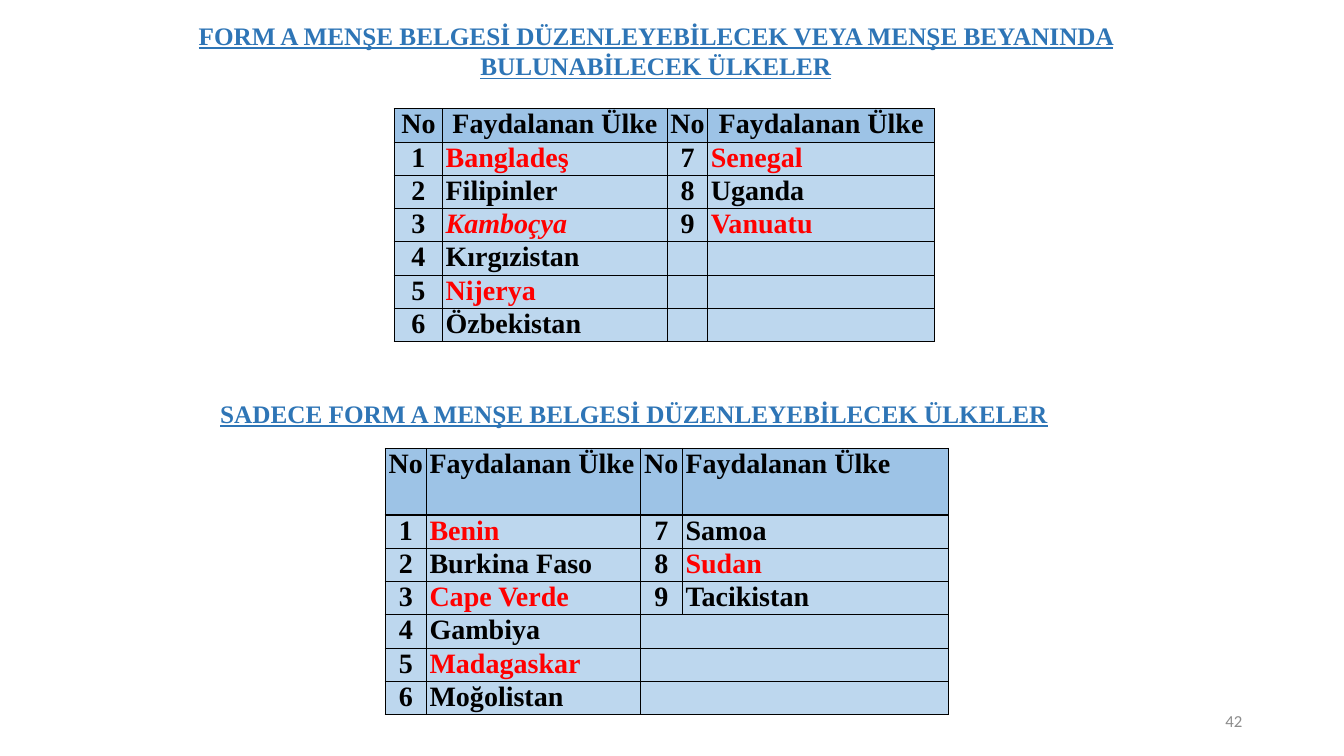
from pptx import Presentation
from pptx.dml.color import RGBColor
from pptx.enum.text import MSO_ANCHOR, MSO_AUTO_SIZE, PP_ALIGN
from pptx.oxml import parse_xml
from pptx.oxml.ns import nsdecls
from pptx.util import Inches, Pt

LEFT, CENTER, RIGHT = PP_ALIGN.LEFT, PP_ALIGN.CENTER, PP_ALIGN.RIGHT
TOP, MIDDLE = MSO_ANCHOR.TOP, MSO_ANCHOR.MIDDLE
NO_FIT = MSO_AUTO_SIZE.NONE

SERIF = "Times New Roman"
BLACK, RED, BLUE, GRAY = "000000", "FF0000", "2E75B6", "8C8C8C"
HEADER_FILL, BODY_FILL = "9DC3E6", "BDD7EE"

DECLARATION_TITLE = "FORM A MENŞE BELGESİ DÜZENLEYEBİLECEK VEYA MENŞE BEYANINDA BULUNABİLECEK ÜLKELER"
FORM_ONLY_TITLE = "SADECE FORM A MENŞE BELGESİ DÜZENLEYEBİLECEK ÜLKELER"
PAGE_NUMBER = "42"
HEADER = ["No", "Faydalanan Ülke"] * 2

DECLARATION_ROWS = [
    HEADER,
    ["1", "Bangladeş", "7", "Senegal"],
    ["2", "Filipinler", "8", "Uganda"],
    ["3", "Kamboçya", "9", "Vanuatu"],
    ["4", "Kırgızistan", "", ""],
    ["5", "Nijerya", "", ""],
    ["6", "Özbekistan", "", ""],
]
FORM_ONLY_ROWS = [
    HEADER,
    ["1", "Benin", "7", "Samoa"],
    ["2", "Burkina Faso", "8", "Sudan"],
    ["3", "Cape Verde", "9", "Tacikistan"],
    ["4", "Gambiya"],
    ["5", "Madagaskar"],
    ["6", "Moğolistan"],
]
RED_COUNTRIES = {"Bangladeş", "Kamboçya", "Nijerya", "Senegal", "Vanuatu",
                 "Benin", "Cape Verde", "Madagaskar", "Sudan"}
ITALIC_COUNTRIES = {"Kamboçya"}


def color(value):
    return RGBColor.from_string(value)


def write(frame, text, size=20, font=SERIF, ink=BLACK, bold=True,
          italic=False, underline=False, align=LEFT):
    para = frame.paragraphs[0]
    para.alignment = align
    span = para.add_run()
    span.text = text
    span.font.name = font
    span.font.size = Pt(size)
    span.font.bold = bold
    span.font.italic = italic
    span.font.underline = underline
    span.font.color.rgb = color(ink)


def place(box, left, top, width, height, anchor=TOP):
    box.left, box.top = Inches(left), Inches(top)
    box.width, box.height = Inches(width), Inches(height)
    frame = box.text_frame
    frame.word_wrap = True
    frame.auto_size = NO_FIT
    frame.vertical_anchor = anchor
    return frame


def add_text(page, left, top, width, height, text, anchor=TOP, **style):
    box = page.shapes.add_textbox(0, 0, 0, 0)
    write(place(box, left, top, width, height, anchor), text, **style)


def format_cell(cell, fill):
    cell.margin_left = cell.margin_right = Inches(0.03)
    cell.margin_top = cell.margin_bottom = 0
    properties = cell._tc.get_or_add_tcPr()
    for side in ("lnL", "lnR", "lnT", "lnB"):
        properties.append(parse_xml(
            f'<a:{side} {nsdecls("a")} w="12700"><a:solidFill>'
            f'<a:srgbClr val="{BLACK}"/></a:solidFill></a:{side}>'))
    cell.fill.solid()
    cell.fill.fore_color.rgb = color(fill)


def add_countries(page, left, top, widths, header_height, row_height, rows, header_align):
    heights = [header_height] + [row_height] * (len(rows) - 1)
    table = page.shapes.add_table(
        len(rows), len(widths), Inches(left), Inches(top),
        Inches(sum(widths)), Inches(sum(heights))).table
    table.first_row = table.horz_banding = False
    for column, width in zip(table.columns, widths):
        column.width = Inches(width)
    for row_index, (texts, height) in enumerate(zip(rows, heights)):
        table.rows[row_index].height = Inches(height)
        is_header = row_index == 0
        for column_index in range(len(widths)):
            cell = table.cell(row_index, column_index)
            format_cell(cell, HEADER_FILL if is_header else BODY_FILL)
            text = texts[column_index] if column_index < len(texts) else ""
            if text:
                name_align = header_align if is_header else LEFT
                write(cell.text_frame, text,
                      ink=RED if text in RED_COUNTRIES else BLACK,
                      italic=text in ITALIC_COUNTRIES,
                      align=name_align if column_index % 2 else CENTER)
        if len(texts) < len(widths):
            table.cell(row_index, len(texts)).merge(table.cell(row_index, len(widths) - 1))


def main():
    deck = Presentation()
    deck.slide_width, deck.slide_height = Inches(13.33), Inches(7.5)
    page = deck.slides.add_slide(deck.slide_layouts[5])
    heading = dict(size=18, ink=BLUE, underline=True, align=CENTER)

    write(place(page.shapes.title, 1.32, 0.15, 10.37, 0.71), DECLARATION_TITLE, **heading)
    add_countries(page, 3.91, 1.08, [0.48, 2.23, 0.4, 2.25], 0.33, 0.33,
                  DECLARATION_ROWS, CENTER)
    add_text(page, 1.71, 3.9, 9.16, 0.4, FORM_ONLY_TITLE, **heading)
    add_countries(page, 3.82, 4.45, [0.41, 2.12, 0.42, 2.64], 0.66, 0.33,
                  FORM_ONLY_ROWS, LEFT)
    add_text(page, 9.42, 6.95, 3, 0.4, PAGE_NUMBER, anchor=MIDDLE,
             size=12, font="Calibri", ink=GRAY, bold=False, align=RIGHT)
    deck.save("out.pptx")


if __name__ == "__main__":
    main()
